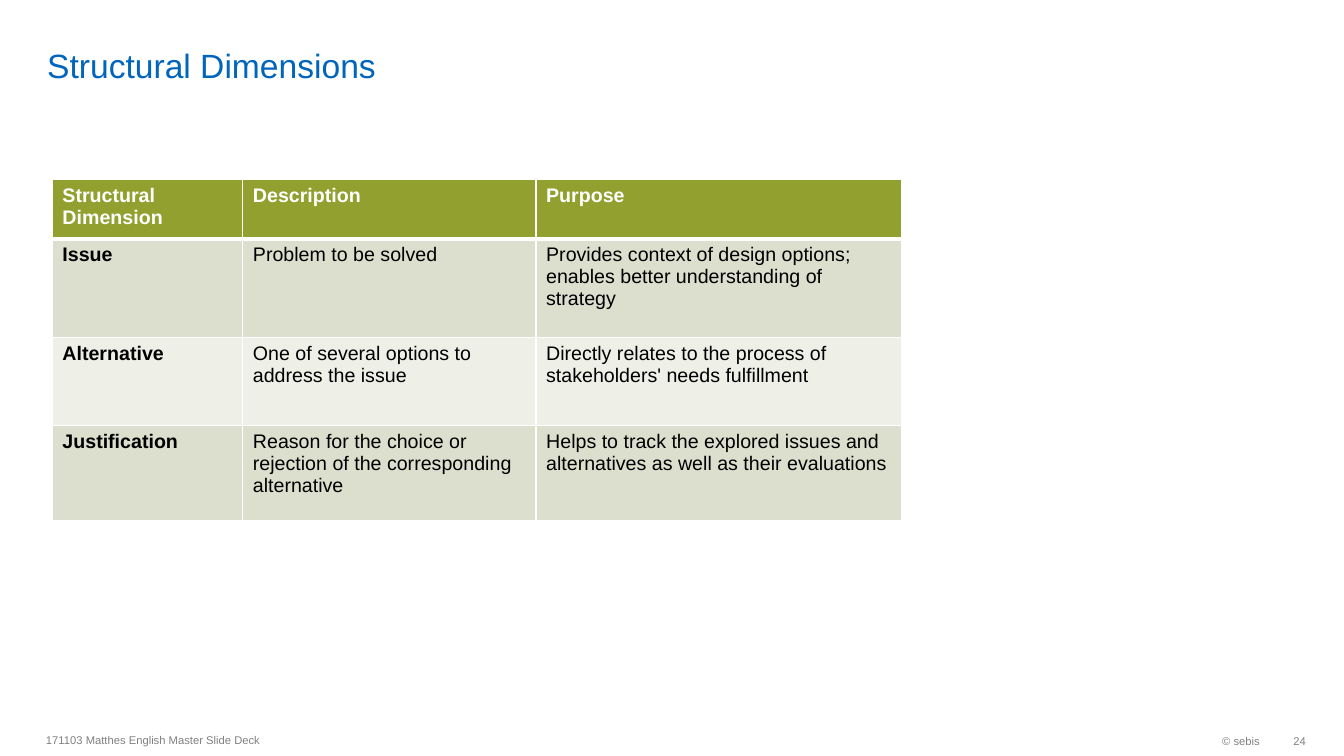
import pptx
import pptx.dml.color
import pptx.enum.text
import pptx.oxml.ns
import pptx.util
from dataclasses import dataclass
from lxml import etree

Cm = pptx.util.Cm
Pt = pptx.util.Pt
PP_ALIGN = pptx.enum.text.PP_ALIGN
MSO_ANCHOR = pptx.enum.text.MSO_ANCHOR


@dataclass(frozen=True)
class Theme:
    font: str = "Arial"
    title: str = "0065BD"
    footer: str = "808080"
    header_fill: str = "91A02F"
    band_fills: tuple = ("DCDFCD", "EEF0E8")
    white: str = "FFFFFF"
    black: str = "000000"
    title_size: int = 24
    table_size: int = 14
    footer_size: int = 8


THEME = Theme()

COL_WIDTHS = (4.8, 7.39, 9.2)
ROW_HEIGHTS = (1.5, 2.49, 2.21, 2.39)
DIMENSIONS = (
    ("Structural Dimension", "Description", "Purpose"),
    ("Issue", "Problem to be solved",
     "Provides context of design options; enables better understanding of strategy"),
    ("Alternative", "One of several options to address the issue",
     "Directly relates to the process of stakeholders' needs fulfillment"),
    ("Justification",
     "Reason for the choice or rejection of the corresponding alternative",
     "Helps to track the explored issues and alternatives as well as their evaluations"),
)


def rgb(color):
    return pptx.dml.color.RGBColor.from_string(color)


def set_text(tf, text, size, color, bold=False, align=PP_ALIGN.LEFT):
    tf.text = text
    p = tf.paragraphs[0]
    p.alignment = align
    for r in p.runs:
        r.font.name = THEME.font
        r.font.size = Pt(size)
        r.font.bold = bold
        r.font.color.rgb = rgb(color)


def add_title(slide, text):
    sp = slide.shapes.title
    sp.left, sp.top, sp.width, sp.height = Cm(0.94), Cm(0.13), Cm(27.91), Cm(2.01)
    tf = sp.text_frame
    tf.vertical_anchor = MSO_ANCHOR.BOTTOM
    tf.margin_left = tf.margin_right = Cm(0.25)
    tf.margin_top = tf.margin_bottom = 0
    set_text(tf, text, THEME.title_size, THEME.title)


def add_footer(slide, text, left, top, width, align=PP_ALIGN.LEFT, margin_right=0.25):
    sp = slide.shapes.add_textbox(Cm(left), Cm(top), Cm(width), Cm(0.81))
    tf = sp.text_frame
    tf.word_wrap = True
    tf.vertical_anchor = MSO_ANCHOR.MIDDLE
    tf.margin_right = Cm(margin_right)
    set_text(tf, text, THEME.footer_size, THEME.footer, align=align)


def set_borders(cell, bottom_width, top_width):
    """Draw white borders; they must come before the fill in the cell properties."""
    tc_pr = cell._tc.get_or_add_tcPr()
    qn = pptx.oxml.ns.qn
    widths = (("a:lnL", 1), ("a:lnR", 1), ("a:lnT", top_width), ("a:lnB", bottom_width))
    for i, (tag, width) in enumerate(widths):
        ln = etree.Element(qn(tag), w=str(Pt(width)))
        fill = etree.SubElement(ln, qn("a:solidFill"))
        etree.SubElement(fill, qn("a:srgbClr"), val=THEME.white)
        tc_pr.insert(i, ln)


def add_dimension_table(slide):
    frame = slide.shapes.add_table(
        len(DIMENSIONS), len(COL_WIDTHS), Cm(1.32), Cm(4.52),
        Cm(sum(COL_WIDTHS)), Cm(sum(ROW_HEIGHTS)))
    table = frame.table
    for column, width in zip(table.columns, COL_WIDTHS):
        column.width = Cm(width)
    for i, (row, height) in enumerate(zip(table.rows, ROW_HEIGHTS)):
        row.height = Cm(height)
        header = i == 0
        for j, cell in enumerate(row.cells):
            cell.fill.solid()
            cell.fill.fore_color.rgb = rgb(
                THEME.header_fill if header else THEME.band_fills[(i - 1) % 2])
            set_borders(cell, 3 if header else 1, 3 if i == 1 else 1)
            set_text(cell.text_frame, DIMENSIONS[i][j], THEME.table_size,
                     THEME.white if header else THEME.black, bold=header or j == 0)


def main():
    prs = pptx.Presentation()
    prs.slide_width, prs.slide_height = Cm(33.87), Cm(19.05)
    slide = prs.slides.add_slide(prs.slide_layouts[5])

    # Title
    add_title(slide, "Structural Dimensions")

    # Footer line
    add_footer(slide, "© sebis", 26.06, 18.26, 5.94, PP_ALIGN.RIGHT)
    add_footer(slide, "171103 Matthes English Master Slide Deck", 0.91, 18.24, 16)
    add_footer(slide, "24", 32, 18.26, 0.91, PP_ALIGN.RIGHT, margin_right=0)

    # Table of dimensions
    add_dimension_table(slide)

    prs.save("out.pptx")


if __name__ == "__main__":
    main()
